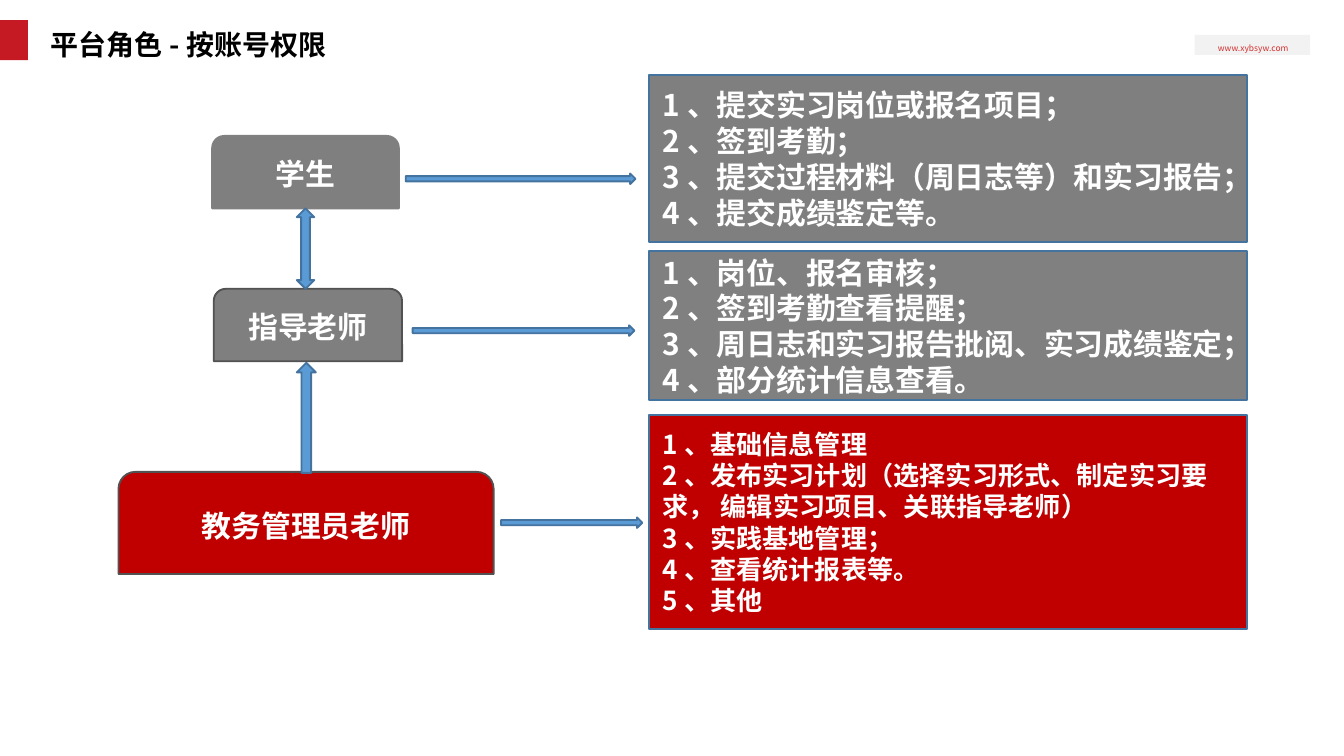
"""Build the slide that shows platform roles and the permissions of each account."""
from dataclasses import dataclass

from lxml import etree
from pptx import Presentation, util as u
from pptx.dml.color import RGBColor
from pptx.enum import shapes, text
from pptx.oxml.ns import qn

FONT = "Noto Sans CJK SC"
KIND = shapes.MSO_SHAPE
ALIGN = text.PP_ALIGN
ANCHOR = text.MSO_ANCHOR
WHITE, GREY, RED, BLUE, NAVY = "FFFFFF", "7F7F7F", "C00000", "5B9BD5", "43739E"
PANEL_LEFT, PANEL_WIDTH = 12.27, 11.3


@dataclass
class Frame:
    left: float
    top: float
    width: float
    height: float

    def lengths(self) -> list:
        return [u.Cm(value) for value in (self.left, self.top, self.width, self.height)]


@dataclass
class Block:
    kind: int
    frame: Frame
    fill: str
    line: str | None = None
    lines: tuple[str, ...] = ()
    size: float = 16
    align: int = ALIGN.LEFT


def color(code: str) -> RGBColor:
    return RGBColor.from_string(code)


def write(box, lines: tuple[str, ...], size: float, ink: str, bold: bool, align: int, anchor: int) -> None:
    frame = box.text_frame
    frame.word_wrap = True
    frame.vertical_anchor = anchor
    frame.text = "\n".join(lines)
    for para in frame.paragraphs:
        para.alignment = align
        font = para.font
        font.size, font.bold, font.name = u.Pt(size), bold, FONT
        font.color.rgb = color(ink)
        defaults = para._p.pPr.find(qn("a:defRPr"))
        etree.SubElement(defaults, qn("a:ea")).set("typeface", FONT)


def draw_block(page, block: Block) -> None:
    shape = page.shapes.add_shape(block.kind, *block.frame.lengths())
    shape.shadow.inherit = False
    shape.fill.solid()
    shape.fill.fore_color.rgb = color(block.fill)
    if block.line:
        shape.line.color.rgb = color(block.line)
        shape.line.width = u.Pt(1)
    else:
        shape.line.fill.background()
    if block.lines:
        write(shape, block.lines, block.size, WHITE, True, block.align, ANCHOR.MIDDLE)


def role(name: str, frame: Frame, fill: str, line: str) -> Block:
    return Block(KIND.ROUND_2_SAME_RECTANGLE, frame, fill, line, (name,), align=ALIGN.CENTER)


def panel(top: float, height: float, fill: str, size: float, *lines: str) -> Block:
    frame = Frame(PANEL_LEFT, top, PANEL_WIDTH, height)
    return Block(KIND.RECTANGLE, frame, fill, NAVY, lines, size)


def arrow(kind: int, frame: Frame) -> Block:
    return Block(kind, frame, BLUE, NAVY)


BLOCKS = [
    Block(KIND.RECTANGLE, Frame(0, 0.38, 0.53, 0.76), "C51A24"),
    Block(KIND.RECTANGLE, Frame(22.58, 0.66, 2.18, 0.38), "F2F2F2"),
    role("指导老师", Frame(4.04, 5.46, 3.56, 1.37), GREY, "525252"),
    role("学生", Frame(4.01, 2.57, 3.53, 1.37), GREY, "808080"),
    role("教务管理员老师", Frame(2.24, 8.92, 7.09, 1.93), RED, "525252"),
    arrow(KIND.RIGHT_ARROW, Frame(7.67, 3.28, 4.34, 0.2)),
    arrow(KIND.RIGHT_ARROW, Frame(7.8, 6.15, 4.19, 0.2)),
    arrow(KIND.RIGHT_ARROW, Frame(9.47, 9.78, 2.67, 0.2)),
    panel(1.42, 3.15, GREY, 16,
          "1、提交实习岗位或报名项目；", "2、签到考勤；",
          "3、提交过程材料（周日志等）和实习报告；", "4、提交成绩鉴定等。"),
    panel(4.75, 2.82, "808080", 16,
          "1、岗位、报名审核；", "2、签到考勤查看提醒；",
          "3、周日志和实习报告批阅、实习成绩鉴定；", "4、部分统计信息查看。"),
    panel(7.85, 4.04, RED, 14,
          "1、基础信息管理",
          "2、发布实习计划（选择实习形式、制定实习要求， 编辑实习项目、关联指导老师）",
          "3、实践基地管理；", "4、查看统计报表等。", "5、其他"),
    arrow(KIND.UP_ARROW, Frame(5.61, 6.86, 0.36, 2.08)),
    arrow(KIND.UP_DOWN_ARROW, Frame(5.61, 3.94, 0.33, 1.52)),
]


def main() -> None:
    deck = Presentation()
    deck.slide_width, deck.slide_height = u.Cm(25.4), u.Cm(14.29)
    page = deck.slides.add_slide(deck.slide_layouts[6])
    for block in BLOCKS:
        draw_block(page, block)

    title = page.shapes.add_textbox(*Frame(0.71, 0.2, 15.16, 1.09).lengths())
    write(title, ("平台角色-按账号权限",), 15, "000000", True, ALIGN.LEFT, ANCHOR.BOTTOM)
    title.text_frame.paragraphs[0].line_spacing = 0.9

    address = page.shapes.add_textbox(*Frame(22.86, 0.69, 1.65, 0.46).lengths())
    write(address, ("www.xybsyw.com",), 4.5, "D62F2F", False, ALIGN.CENTER, ANCHOR.TOP)
    address.text_frame.margin_left = address.text_frame.margin_right = u.Cm(0.13)

    deck.save("out.pptx")


if __name__ == "__main__":
    main()
